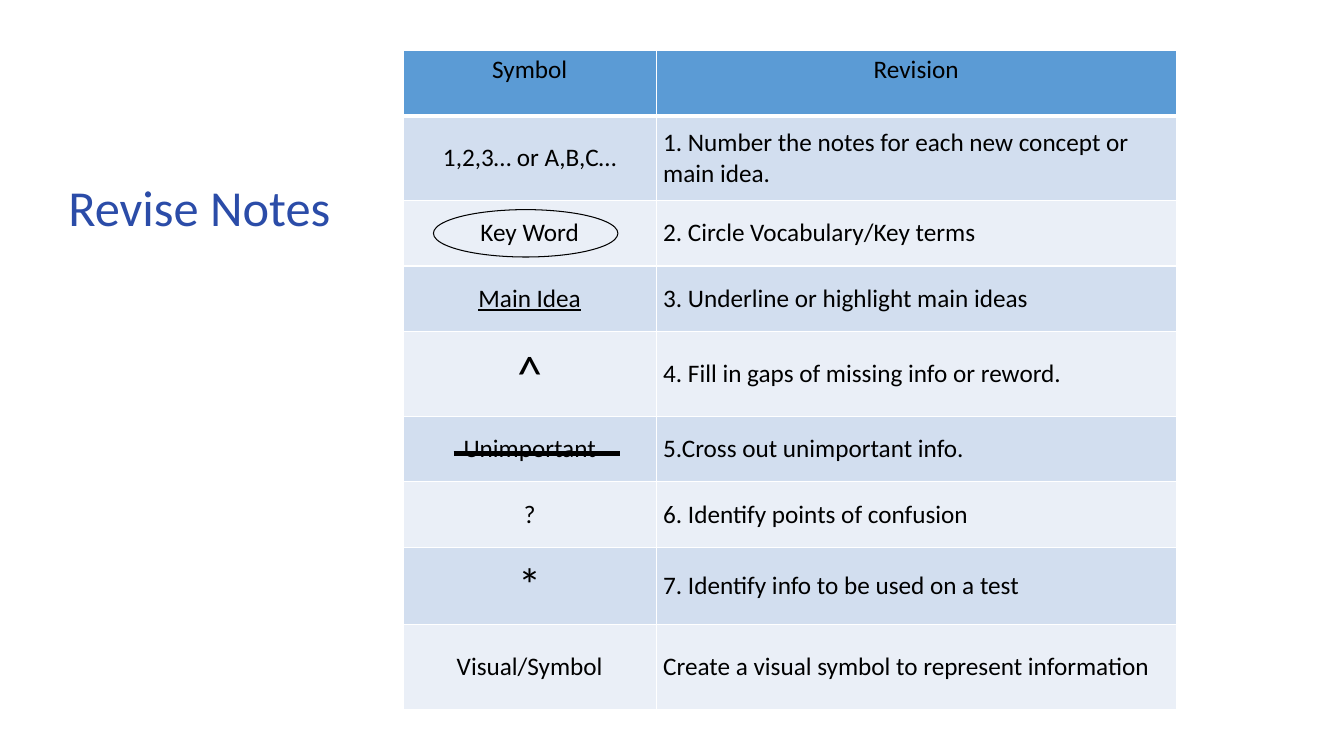
import lxml.etree
import pptx
import pptx.dml.color
import pptx.enum.shapes
import pptx.enum.text
import pptx.oxml.ns
import pptx.util

COLOURS = {
    "ink": "000000",
    "title": "2B4CA8",
    "header": "5B9BD5",
    "odd": "D2DEEF",
    "even": "EAEFF7",
    "border": "FFFFFF",
}
COLUMN_WIDTHS = [7.53, 15.48]
SHORT, STARRED, TALL = 2.6, 3.08, 3.36
# Symbol, revision, row height, symbol size, symbol underlined
REVISIONS = [
    ("Symbol", "Revision", SHORT, 18, False),
    ("1,2,3… or A,B,C…", "1. Number the notes for each new concept or main idea.", TALL, 18, False),
    ("Key Word", "2. Circle Vocabulary/Key terms", SHORT, 18, False),
    ("Main Idea", "3. Underline or highlight main ideas", SHORT, 18, True),
    ("^", "4. Fill in gaps of missing info or reword.", TALL, 36, False),
    ("Unimportant", "5.Cross out unimportant info.", SHORT, 18, False),
    ("?", "6. Identify points of confusion", SHORT, 18, False),
    ("*", "7. Identify info to be used on a test", STARRED, 33, False),
    ("Visual/Symbol", "Create a visual symbol to represent information", TALL, 18, False),
]


class Page:
    """A blank slide measured on a grid of 40 columns by 30 rows."""

    font = "Calibri"

    def __init__(self, deck):
        self.shapes = deck.slides.add_slide(deck.slide_layouts[6]).shapes
        self.column = deck.slide_width / 40
        self.row = deck.slide_height / 30

    def across(self, columns):
        return round(columns * self.column)

    def down(self, rows):
        return round(rows * self.row)

    def place(self, left, top, width, height):
        return self.across(left), self.down(top), self.across(width), self.down(height)

    def colour(self, name):
        return pptx.dml.color.RGBColor.from_string(COLOURS[name])

    def label(self, frame, text, size, colour="ink", underline=False, centred=False):
        frame.text = text
        para = frame.paragraphs[0]
        align = pptx.enum.text.PP_ALIGN
        para.alignment = align.CENTER if centred else align.LEFT
        font = para.runs[0].font
        font.name, font.size = self.font, pptx.util.Pt(size)
        font.bold, font.underline = False, underline
        font.color.rgb = self.colour(colour)

    def title(self, text, *area):
        frame = self.shapes.add_textbox(*self.place(*area)).text_frame
        frame.word_wrap = False
        frame.auto_size = pptx.enum.text.MSO_AUTO_SIZE.SHAPE_TO_FIT_TEXT
        self.label(frame, text, 36, "title")

    def border(self, cell, widths):
        """Draw the sides L, R, T and B in the given point widths."""
        properties = cell._tc.get_or_add_tcPr()
        qn = pptx.oxml.ns.qn
        for side, width in zip("LRTB", widths):
            line = lxml.etree.SubElement(properties, qn(f"a:ln{side}"), w=str(pptx.util.Pt(width)))
            fill = lxml.etree.SubElement(line, qn("a:solidFill"))
            lxml.etree.SubElement(fill, qn("a:srgbClr"), val=COLOURS["border"])

    def cell(self, cell, fill, header):
        self.border(cell, (1, 1, 1, 3 if header else 1))
        cell.fill.solid()
        cell.fill.fore_color.rgb = self.colour(fill)
        cell.margin_left = cell.margin_right = self.across(0.21)
        cell.margin_top = cell.margin_bottom = self.down(0.16)
        anchor = pptx.enum.text.MSO_ANCHOR
        cell.vertical_anchor = anchor.TOP if header else anchor.MIDDLE

    def table(self, left, top, widths, records):
        area = self.place(left, top, sum(widths), sum(record[2] for record in records))
        table = self.shapes.add_table(len(records), len(widths), *area).table
        table.first_row = table.horz_banding = False
        for column, width in zip(table.columns, widths):
            column.width = self.across(width)
        for number, (symbol, revision, height, size, underline) in enumerate(records):
            header = number == 0
            fill = "header" if header else "odd" if number % 2 else "even"
            table.rows[number].height = self.down(height)
            symbol_cell, revision_cell = table.rows[number].cells
            for cell in (symbol_cell, revision_cell):
                self.cell(cell, fill, header)
            self.label(symbol_cell.text_frame, symbol, size, underline=underline, centred=True)
            self.label(revision_cell.text_frame, revision, 18, centred=header)

    def ring(self, *area):
        oval = pptx.enum.shapes.MSO_SHAPE.OVAL
        ring = self.shapes.add_shape(oval, *self.place(*area))
        ring.shadow.inherit = False
        ring.fill.background()
        ring.line.color.rgb = self.colour("ink")
        ring.line.width = pptx.util.Pt(0.75)

    def strike(self, left, right, height):
        straight = pptx.enum.shapes.MSO_CONNECTOR.STRAIGHT
        level = self.down(height)
        strike = self.shapes.add_connector(straight, self.across(left), level, self.across(right), level)
        strike.line.color.rgb = self.colour("ink")
        strike.line.width = pptx.util.Pt(3.75)
        lxml.etree.SubElement(strike._element.spPr, pptx.oxml.ns.qn("a:effectLst"))


def main():
    deck = pptx.Presentation()
    deck.slide_width = pptx.util.Inches(13.33)
    deck.slide_height = pptx.util.Inches(7.5)
    page = Page(deck)
    page.table(12, 2, COLUMN_WIDTHS, REVISIONS)
    page.ring(12.9, 8.32, 5.49, 1.88)
    page.strike(13.5, 18.45, 18)
    page.title("Revise Notes", 1.74, 6.8, 8.46, 2.84)
    deck.save("out.pptx")


if __name__ == "__main__":
    main()
